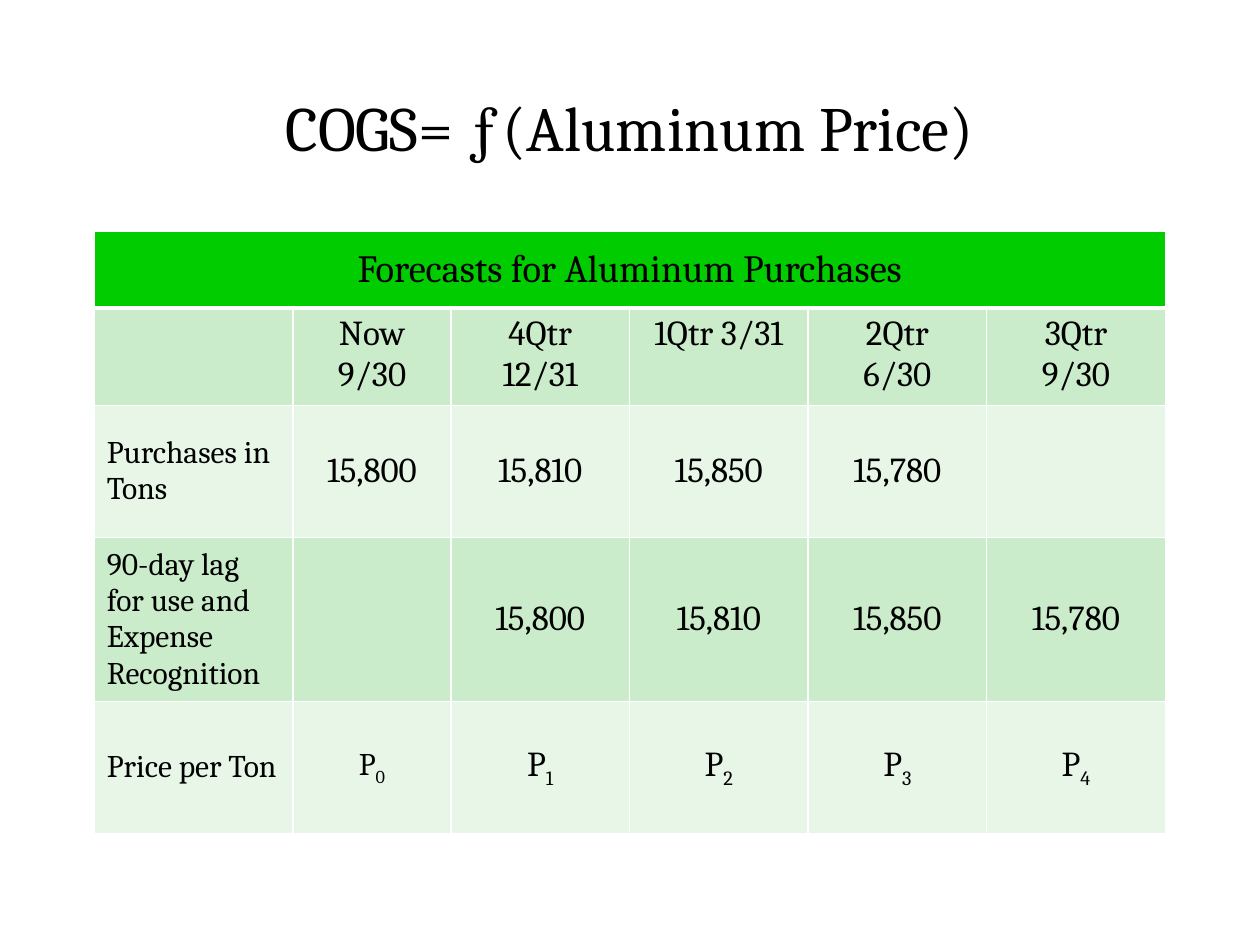
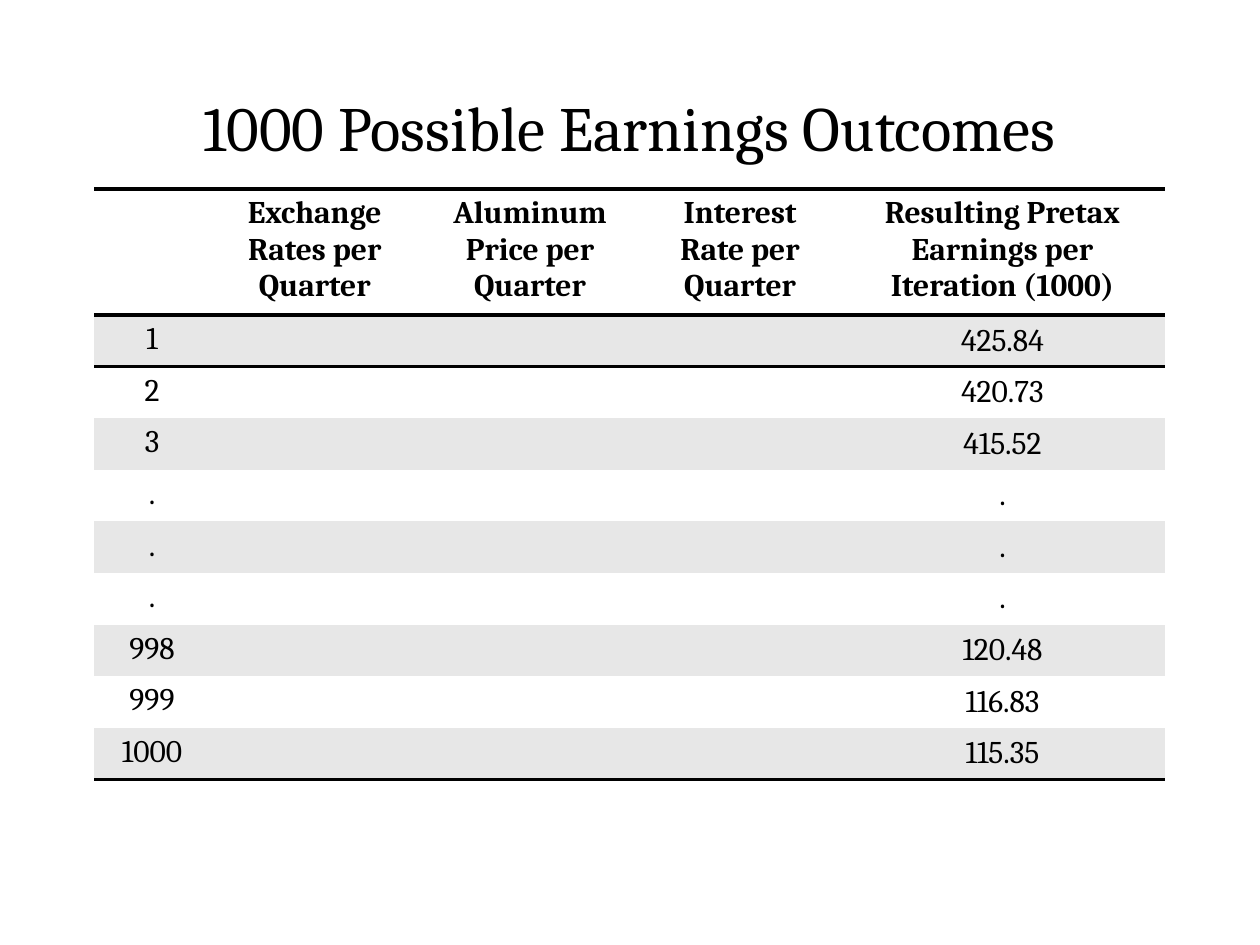
import pptx
import pptx.util
import pptx.dml.color
import pptx.enum.text
import pptx.oxml.ns
import lxml.etree

Cm, Pt = pptx.util.Cm, pptx.util.Pt
ALIGN = pptx.enum.text.PP_ALIGN
ANCHOR = pptx.enum.text.MSO_ANCHOR

FONT = "Cambria"
COLORS = {
    "text": "000000",
    "white": "FFFFFF",
    "header green": "00CC00",
    "mid green": "CBECCB",
    "pale green": "E7F6E7",
    "band gray": "E7E7E7",
}
NO_STYLE = "{2D5ABB26-0587-4C30-8999-92F81FD0307C}"
LEFT, WIDTH = Cm(1.9), Cm(21.59)
TITLE_BOX = (LEFT, Cm(1.27), WIDTH, Cm(2.54))
FORECAST_BOX = (LEFT, Cm(4.66), WIDTH, Cm(12.15))
OUTCOME_BOX = (LEFT, Cm(3.81), WIDTH, Cm(11.9))


def rgb(name):
    return pptx.dml.color.RGBColor.from_string(COLORS[name])


def write_text(text_frame, text, size=18, bold=False, align=ALIGN.CENTER):
    """Write one paragraph; an underscore starts a subscript."""
    paragraph = text_frame.paragraphs[0]
    paragraph.alignment = align
    for index, line in enumerate(text.split("\n")):
        if index:
            paragraph.add_line_break()
        for position, part in enumerate(line.split("_")):
            run = paragraph.add_run()
            run.text = part
            run.font.name = FONT
            run.font.size = Pt(size)
            run.font.bold = bold
            run.font.color.rgb = rgb("text")
            if position:
                run._r.get_or_add_rPr().set("baseline", "-25000")


def add_title(slide, box, text):
    title = slide.shapes.title
    title.left, title.top, title.width, title.height = box
    title.text_frame.vertical_anchor = ANCHOR.MIDDLE
    write_text(title.text_frame, text, size=36)


def add_plain_table(slide, box, column_widths, row_heights):
    """Add a table without a preset style, sized in centimetres."""
    frame = slide.shapes.add_table(len(row_heights), len(column_widths), *box)
    table = frame.table
    table._tbl.tblPr.find(pptx.oxml.ns.qn("a:tableStyleId")).text = NO_STYLE
    for column, width in zip(table.columns, column_widths):
        column.width = Cm(width)
    for row, height in zip(table.rows, row_heights):
        row.height = Cm(height)
    return table


def format_cell(cell, fill, borders, anchor):
    """Set borders ({side: (colour, points)}), fill and anchor."""
    properties = cell._tc.get_or_add_tcPr()
    for side in "LRTB":
        if side in borders:
            color, points = borders[side]
            line = lxml.etree.SubElement(
                properties, pptx.oxml.ns.qn(f"a:ln{side}"), w=str(Pt(points)))
            solid = lxml.etree.SubElement(line, pptx.oxml.ns.qn("a:solidFill"))
            lxml.etree.SubElement(
                solid, pptx.oxml.ns.qn("a:srgbClr"), val=COLORS[color])
    cell.fill.solid()
    cell.fill.fore_color.rgb = rgb(fill)
    cell.vertical_anchor = anchor


def add_forecast_table(slide, box):
    rows = [
        ["Forecasts for Aluminum Purchases", "", "", "", "", ""],
        ["", "Now 9/30", "4Qtr\n12/31", "1Qtr 3/31", "2Qtr\n6/30", "3Qtr\n9/30"],
        ["Purchases in Tons", "15,800", "15,810", "15,850", "15,780", ""],
        ["90-day lag for use and Expense Recognition",
         "", "15,800", "15,810", "15,850", "15,780"],
        ["Price per Ton", "P_0", "P_1", "P_2", "P_3", "P_4"],
    ]
    table = add_plain_table(slide, box, [4.01, 3.18] + [3.6] * 4,
                            [1.55, 1.96, 2.67, 3.3, 2.67])
    table.cell(0, 0).merge(table.cell(0, 5))
    for row_index, row in enumerate(rows):
        # Header row, then alternating green bands
        if row_index == 0:
            fill = "header green"
        else:
            fill = "mid green" if row_index % 2 else "pale green"
        borders = {side: ("white", 1) for side in "LRTB"}
        if row_index == 0:
            borders["B"] = ("white", 3)
        elif row_index == 1:
            borders["T"] = ("white", 3)
        anchor = ANCHOR.TOP if row_index == 1 else ANCHOR.MIDDLE
        for column_index, text in enumerate(row):
            cell = table.cell(row_index, column_index)
            format_cell(cell, fill, borders, anchor)
            if not text:
                continue
            if row_index == 0:
                write_text(cell.text_frame, text, size=22)
            elif column_index == 0:
                write_text(cell.text_frame, text, align=ALIGN.LEFT)
            else:
                write_text(cell.text_frame, text, size=18 if text == "P_0" else 20)


def add_outcome_table(slide, box):
    headings = ["", "Exchange Rates per Quarter", "Aluminum Price per Quarter",
                "Interest Rate per Quarter",
                "Resulting Pretax Earnings per Iteration (1000)"]
    outcomes = [("1", "425.84"), ("2", "420.73"), ("3", "415.52"),
                (".", "."), (".", "."), (".", "."),
                ("998", "120.48"), ("999", "116.83"), ("1000", "115.35")]
    rows = [headings] + [[number, "", "", "", earnings]
                         for number, earnings in outcomes]
    table = add_plain_table(slide, box, [2.33, 4.23, 4.45, 4.02, 6.56],
                            [2.54] + [1.04] * len(outcomes))
    rule = ("text", 2)
    for row_index, row in enumerate(rows):
        # Black rules frame the heading and close the table
        borders = {}
        if row_index <= 1:
            borders["T"] = rule
        if row_index in (0, len(outcomes)):
            borders["B"] = rule
        fill = "band gray" if row_index % 2 else "white"
        for column_index, text in enumerate(row):
            is_earnings = row_index > 0 and column_index == len(row) - 1
            cell = table.cell(row_index, column_index)
            format_cell(cell, fill, borders,
                        ANCHOR.MIDDLE if is_earnings else ANCHOR.TOP)
            if text:
                write_text(cell.text_frame, text, bold=row_index == 0)


def main():
    presentation = pptx.Presentation()
    presentation.slide_width, presentation.slide_height = Cm(25.4), Cm(19.05)
    slides = [
        ("COGS= ƒ(Aluminum Price)", add_forecast_table, FORECAST_BOX),
        ("1000 Possible Earnings Outcomes", add_outcome_table, OUTCOME_BOX),
    ]
    title_only = presentation.slide_layouts[5]
    for title, add_content, box in slides:
        slide = presentation.slides.add_slide(title_only)
        add_title(slide, TITLE_BOX, title)
        add_content(slide, box)
    presentation.save("out.pptx")


if __name__ == "__main__":
    main()
